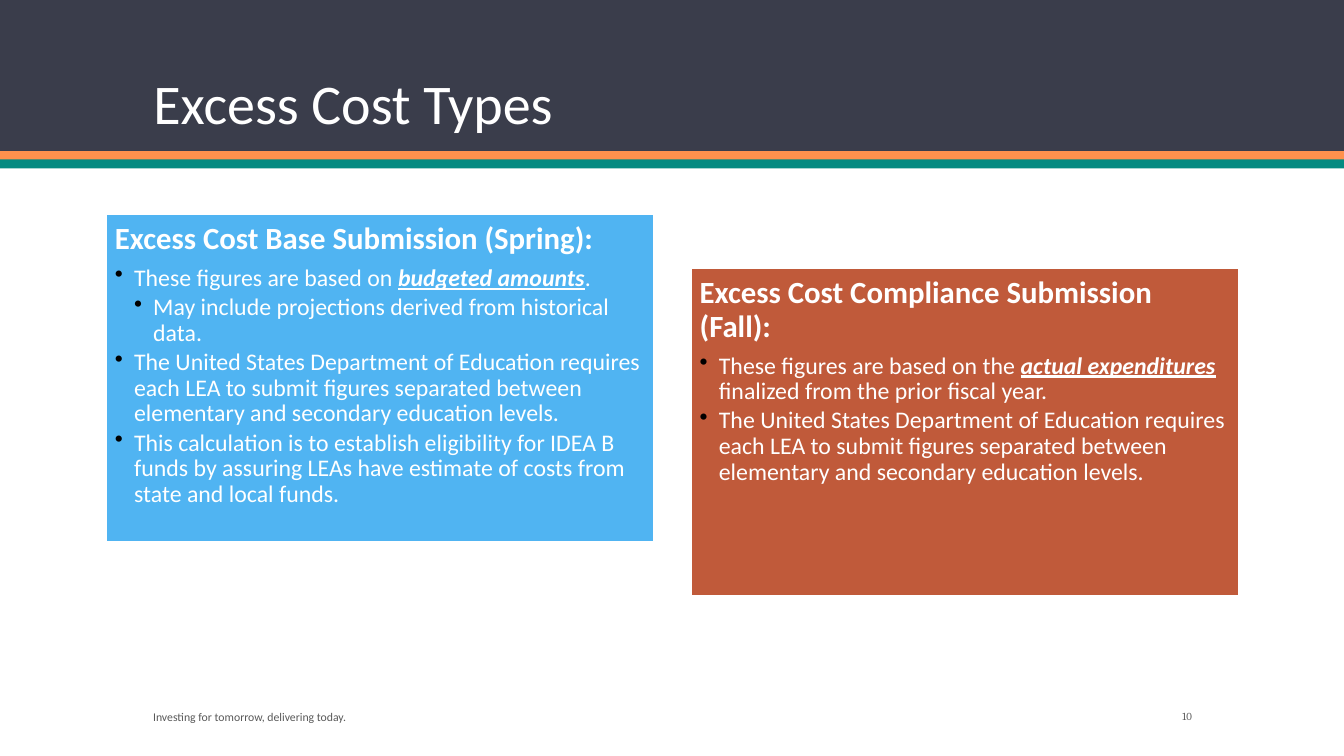
from dataclasses import dataclass

from lxml.etree import SubElement
from pptx import Presentation
from pptx.dml.color import RGBColor
from pptx.enum.shapes import MSO_SHAPE as Shape
from pptx.enum.text import MSO_ANCHOR as Anchor, MSO_AUTO_SIZE as AutoSize, PP_ALIGN as Align
from pptx.oxml.ns import qn
from pptx.util import Inches, Pt

WIDTH, HEIGHT = 13.33, 7.5
WHITE, GREY = "FFFFFF", "595959"
INDENT = 0.19
DEPARTMENT_RULE = (
    "The United States Department of Education requires each LEA to submit "
    "figures separated between elementary and secondary education levels."
)


@dataclass
class Band:
    top: float
    height: float
    color: str


@dataclass
class Span:
    text: str
    strong: bool = False


@dataclass
class Bullet:
    spans: list[Span]
    level: int = 1


@dataclass
class Card:
    left: float
    top: float
    color: str
    heading: str
    bullets: list[Bullet]


@dataclass
class Footer:
    left: float
    width: float
    text: str
    size: float
    font: str
    align: Align


BANDS = [
    Band(0, 1.5, "3A3D4B"),
    Band(1.5, 0.09, "FF914D"),
    Band(1.58, 0.09, "048A81"),
]
CARDS = [
    Card(1.05, 2.12, "50B4F2", "Excess Cost Base Submission (Spring):", [
        Bullet([Span("These figures are based on "), Span("budgeted amounts", True), Span(".")]),
        Bullet([Span("May include projections derived from historical data.")], level=2),
        Bullet([Span(DEPARTMENT_RULE)]),
        Bullet([Span("This calculation is to establish eligibility for IDEA B funds by assuring "
                     "LEAs have estimate of costs from state and local funds.")]),
    ]),
    Card(6.85, 2.66, "C05A3A", "Excess Cost Compliance Submission (Fall):", [
        Bullet([Span("These figures are based on the "), Span("actual expenditures ", True),
                Span("finalized from the prior fiscal year.")]),
        Bullet([Span(DEPARTMENT_RULE)]),
    ]),
]
FOOTERS = [
    Footer(1.42, 6.83, "Investing for tomorrow, delivering today.", 8.4, "Calibri", Align.LEFT),
    Footer(10.42, 1.5, "10", 7.7, "Cambria", Align.RIGHT),
]


def rgb(color: str) -> RGBColor:
    return RGBColor.from_string(color)


def add_span(para, text: str, size: float, color: str = WHITE, font: str = "Calibri",
             bold: bool = False):
    span = para.add_run()
    span.text = text
    span.font.size = Pt(size)
    span.font.name = font
    span.font.bold = bold
    span.font.color.rgb = rgb(color)
    return span


def set_spacing(para, line: float, after: float, align: Align = Align.LEFT) -> None:
    para.alignment = align
    para.line_spacing = line
    para.space_before = Pt(0)
    para.space_after = Pt(after)


def set_bullet(para, level: int) -> None:
    props = para._p.get_or_add_pPr()
    props.set("marL", str(Inches(INDENT * level)))
    props.set("indent", str(-Inches(INDENT)))
    SubElement(SubElement(props, qn("a:buClr")), qn("a:srgbClr"), val="000000")
    SubElement(props, qn("a:buChar"), char="•")


def add_rect(page, left: float, top: float, width: float, height: float, color: str):
    box = page.shapes.add_shape(
        Shape.RECTANGLE, Inches(left), Inches(top), Inches(width), Inches(height))
    box.shadow.inherit = False
    box.fill.solid()
    box.fill.fore_color.rgb = rgb(color)
    box.line.fill.background()
    return box


def add_title(page, text: str) -> None:
    title = page.shapes.title
    title.left, title.top = Inches(1.42), Inches(0.28)
    title.width, title.height = Inches(10.5), Inches(1.13)
    frame = title.text_frame
    frame.auto_size = AutoSize.NONE
    frame.vertical_anchor = Anchor.BOTTOM
    para = frame.paragraphs[0]
    set_spacing(para, 0.9, 0)
    add_span(para, text, 40)
    # Bring the title in front of the header bands
    title.element.getparent().append(title.element)


def add_card(page, card: Card) -> None:
    box = add_rect(page, card.left, card.top, 5.44, 3.26, card.color)
    box.line.color.rgb = rgb(WHITE)
    box.line.width = Pt(2)
    frame = box.text_frame
    frame.word_wrap = True
    frame.vertical_anchor = Anchor.TOP
    frame.margin_left = frame.margin_right = Inches(0.09)
    frame.margin_top = frame.margin_bottom = Inches(0.09)
    heading = frame.paragraphs[0]
    set_spacing(heading, 0.9, 7)
    add_span(heading, card.heading, 22, bold=True)
    for bullet in card.bullets:
        para = frame.add_paragraph()
        para.level = bullet.level
        set_spacing(para, 0.9, 2.5)
        set_bullet(para, bullet.level)
        for part in bullet.spans:
            span = add_span(para, part.text, 17, bold=part.strong)
            span.font.italic = span.font.underline = part.strong


def add_footer(page, footer: Footer) -> None:
    box = page.shapes.add_textbox(
        Inches(footer.left), Inches(6.97), Inches(footer.width), Inches(0.3))
    frame = box.text_frame
    frame.word_wrap = True
    frame.vertical_anchor = Anchor.MIDDLE
    para = frame.paragraphs[0]
    set_spacing(para, 0.8, 6, footer.align)
    add_span(para, footer.text, footer.size, GREY, footer.font)


def main() -> None:
    deck = Presentation()
    deck.slide_width, deck.slide_height = Inches(WIDTH), Inches(HEIGHT)
    page = deck.slides.add_slide(deck.slide_layouts[5])

    # Header
    for band in BANDS:
        add_rect(page, 0, band.top, WIDTH, band.height, band.color)
    add_title(page, "Excess Cost Types")

    # Submission types
    for card in CARDS:
        add_card(page, card)

    # Footer line
    for footer in FOOTERS:
        add_footer(page, footer)

    deck.save("out.pptx")


if __name__ == "__main__":
    main()
